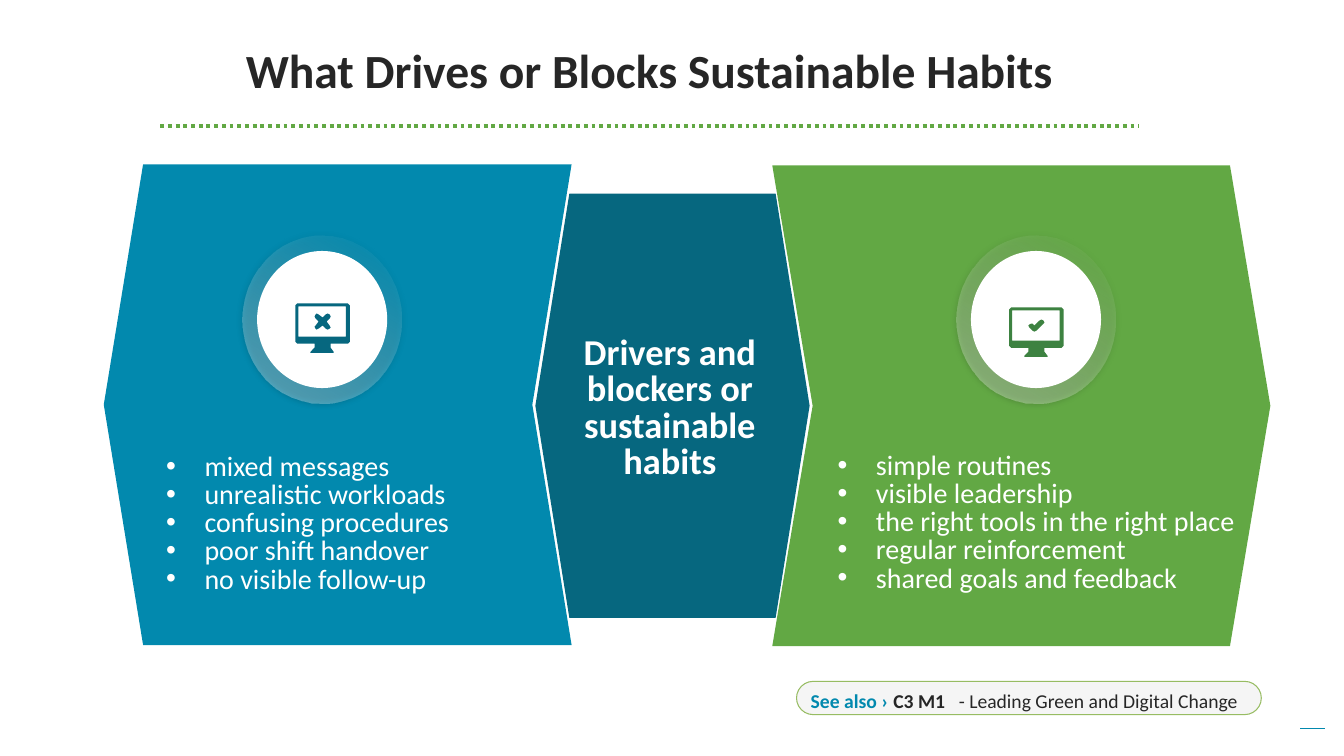
from lxml.etree import SubElement
from pptx import Presentation
from pptx.dml.color import RGBColor
from pptx.enum.dml import MSO_LINE
from pptx.enum.shapes import MSO_CONNECTOR, MSO_SHAPE as SHAPE
from pptx.enum.text import MSO_ANCHOR as ANCHOR, PP_ALIGN as ALIGN
from pptx.oxml.ns import qn
from pptx.util import Pt

PX = 9144  # 100 px to the inch
FONT = "Calibri"
COLORS = {
    "white": "FFFFFF", "ink": "262626", "blue": "0289AE", "teal": "06677F",
    "green": "62A844", "dark_green": "3D8241", "pale": "F5F5F5", "border": "97BC62",
}
MONITOR = [(52, 40), (35, 40), (35, 44), (38, 48), (38, 49), (15, 49), (15, 48),
           (19, 44), (19, 40), (2, 40), (0, 38), (0, 2), (2, 0), (52, 0), (54, 2), (54, 38)]
SCREEN = [(3, 3), (50, 3), (50, 33), (3, 33)]
CROSS = [(21, 10), (23, 11), (27, 14), (30, 11), (32, 10), (34, 11), (35, 13),
         (34, 15), (31, 18), (34, 22), (35, 24), (34, 25), (32, 26), (30, 25),
         (27, 22), (23, 25), (21, 26), (20, 25), (19, 23), (20, 22), (23, 18),
         (20, 15), (19, 13), (20, 11)]
CHECK = [(22, 16), (23, 16), (25, 18), (30, 13), (32, 12), (34, 13), (35, 15),
         (34, 16), (27, 23), (25, 24), (23, 23), (20, 20), (19, 18), (20, 17)]


def rgb(name):
    return RGBColor.from_string(COLORS[name])


def emu(*lengths):
    return [round(length * PX) for length in lengths]


def add_filled(shapes, kind, box, fill, adjustments=()):
    shape = shapes.add_shape(kind, *emu(*box))
    shape.shadow.inherit = False
    shape.fill.solid()
    shape.fill.fore_color.rgb = rgb(fill)
    shape.line.fill.background()
    for index, value in enumerate(adjustments):
        shape.adjustments[index] = value
    return shape


def add_line(slide, start, end, color, width):
    line = slide.shapes.add_connector(MSO_CONNECTOR.STRAIGHT, *emu(*start, *end))
    line.line.color.rgb = rgb(color)
    line.line.width = Pt(width)
    SubElement(line._element.spPr, qn("a:effectLst"))
    return line


def remove_margins(frame):
    frame.margin_left = frame.margin_right = frame.margin_top = frame.margin_bottom = 0


def write(frame, texts, size, color, bold=False, align=ALIGN.LEFT, spacing=None, bullet=False):
    frame.word_wrap = True
    for index, text in enumerate(texts):
        paragraph = frame.paragraphs[0] if index == 0 else frame.add_paragraph()
        paragraph.text = text
        paragraph.alignment = align
        if spacing:
            paragraph.line_spacing = Pt(spacing)
        if bullet:
            properties = paragraph._p.get_or_add_pPr()
            indent = emu(38)[0]
            properties.set("marL", str(indent))
            properties.set("indent", str(-indent))
            SubElement(properties, qn("a:buFont"), typeface="Arial")
            SubElement(properties, qn("a:buChar"), char="•")
        font = paragraph.font
        font.name, font.size, font.bold = FONT, Pt(size), bold
        font.color.rgb = rgb(color)


def add_title(slide, box):
    title = slide.shapes.title
    title.left, title.top, title.width, title.height = emu(*box)
    title.text_frame.vertical_anchor = ANCHOR.TOP
    write(title.text_frame, ["What Drives or Blocks Sustainable Habits"], 34, "ink",
          bold=True, align=ALIGN.CENTER, spacing=35.2)
    left, top, width, _ = box
    rule = add_line(slide, (left - 23, top + 82), (left + width + 24, top + 82), "green", 2.75)
    rule.line.dash_style = MSO_LINE.ROUND_DOT


def add_badge(slide, left, top):
    """White disc inside a translucent, softly shadowed ring."""
    group = slide.shapes.add_group_shape()
    ring = add_filled(group.shapes, SHAPE.OVAL, (left, top, 157, 166), "white")
    ring.fill.gradient()
    ring.fill.gradient_angle = 240
    for stop in ring.fill.gradient_stops:
        stop.color.rgb = rgb("white")
    properties = ring._element.spPr
    for color, alpha in zip(list(properties.iter(qn("a:srgbClr"))), (0, 36000)):
        SubElement(color, qn("a:alpha"), val=str(alpha))
    shadow = SubElement(properties.find(qn("a:effectLst")), qn("a:outerShdw"),
                        blurRad=str(Pt(5)), dist="0", dir="0", algn="ctr", rotWithShape="0")
    shade = SubElement(shadow, qn("a:srgbClr"), val="000000")
    SubElement(shade, qn("a:alpha"), val="66000")
    add_filled(group.shapes, SHAPE.OVAL, (left + 14, top + 15, 129, 136), "white")


def add_monitor(slide, left, top, mark, color):
    builder = slide.shapes.build_freeform(*MONITOR[0], scale=PX)
    builder.add_line_segments(MONITOR[1:], close=True)
    for outline in (SCREEN, mark):
        builder.move_to(*outline[0])
        builder.add_line_segments(outline[1:], close=True)
    icon = builder.convert_to_shape(*emu(left, top))
    icon.shadow.inherit = False
    icon.fill.solid()
    icon.fill.fore_color.rgb = rgb(color)
    icon.line.fill.background()


def add_panel(slide, box, fill, badge, icon_drop, mark, icon_color, bullets_at, items, flip=False):
    """Chevron with badge, icon and bullets; badge and bullets_at are offsets in the box."""
    left, top = box[:2]
    chevron = add_filled(slide.shapes, SHAPE.CHEVRON, box, fill, [0.084])
    if flip:
        chevron._element.spPr.xfrm.set("flipH", "1")
    badge_left, badge_top = left + badge[0], top + badge[1]
    add_badge(slide, badge_left, badge_top)
    add_monitor(slide, badge_left + 52, badge_top + icon_drop, mark, icon_color)
    bullets = slide.shapes.add_textbox(*emu(left + bullets_at[0], top + bullets_at[1], 418, 151))
    write(bullets.text_frame, items, 20, "white", spacing=20, bullet=True)


def add_center_label(slide, box):
    left, top, _, _ = box
    label = slide.shapes.add_textbox(*emu(left + 16, top + 141, 235, 146))
    remove_margins(label.text_frame)
    label.text_frame.vertical_anchor = ANCHOR.MIDDLE
    write(label.text_frame, ["Drivers and blockers or sustainable", "habits"], 26, "white",
          bold=True, align=ALIGN.CENTER, spacing=25.8)


def add_see_also(slide, box):
    left, top, _, _ = box
    pill = add_filled(slide.shapes, SHAPE.ROUNDED_RECTANGLE, box, "pale", [0.5])
    pill.line.color.rgb = rgb("border")
    pill.line.width = Pt(0.75)
    for offset, width, text, color, bold in (
        (14, 83, "See also ›", "blue", True),
        (96, 67, "C3 M1", "ink", True),
        (161, 382, "- Leading Green and Digital Change", "ink", False),
    ):
        part = slide.shapes.add_textbox(*emu(left + offset, top + 7, width, 24))
        remove_margins(part.text_frame)
        part.text_frame.vertical_anchor = ANCHOR.MIDDLE
        write(part.text_frame, [text], 14, color, bold=bold)


def main():
    presentation = Presentation()
    presentation.slide_width, presentation.slide_height = emu(1333, 750)
    slide = presentation.slides.add_slide(presentation.slide_layouts[5])
    add_line(slide, (1314, 723), (1289, 723), "blue", 0.75)
    center_box = (531, 192, 272, 421)
    add_filled(slide.shapes, SHAPE.LEFT_RIGHT_ARROW, center_box, "teal", [1, 0.124])
    add_panel(slide, (766, 164, 494, 477), "green", (183, 70), 71, CHECK, "dark_green", (55, 281),
              ["simple routines", "visible leadership", "the right tools in the right place",
               "regular reinforcement", "shared goals and feedback"])
    add_panel(slide, (103, 163, 464, 477), "blue", (138, 71), 67, CROSS, "teal", (52, 283),
              ["mixed messages", "unrealistic workloads", "confusing procedures",
               "poor shift handover", "no visible follow-up"], flip=True)
    add_center_label(slide, center_box)
    add_title(slide, (182, 43, 924, 122))
    add_see_also(slide, (790, 676, 461, 33))
    presentation.save("out.pptx")


if __name__ == "__main__":
    main()
